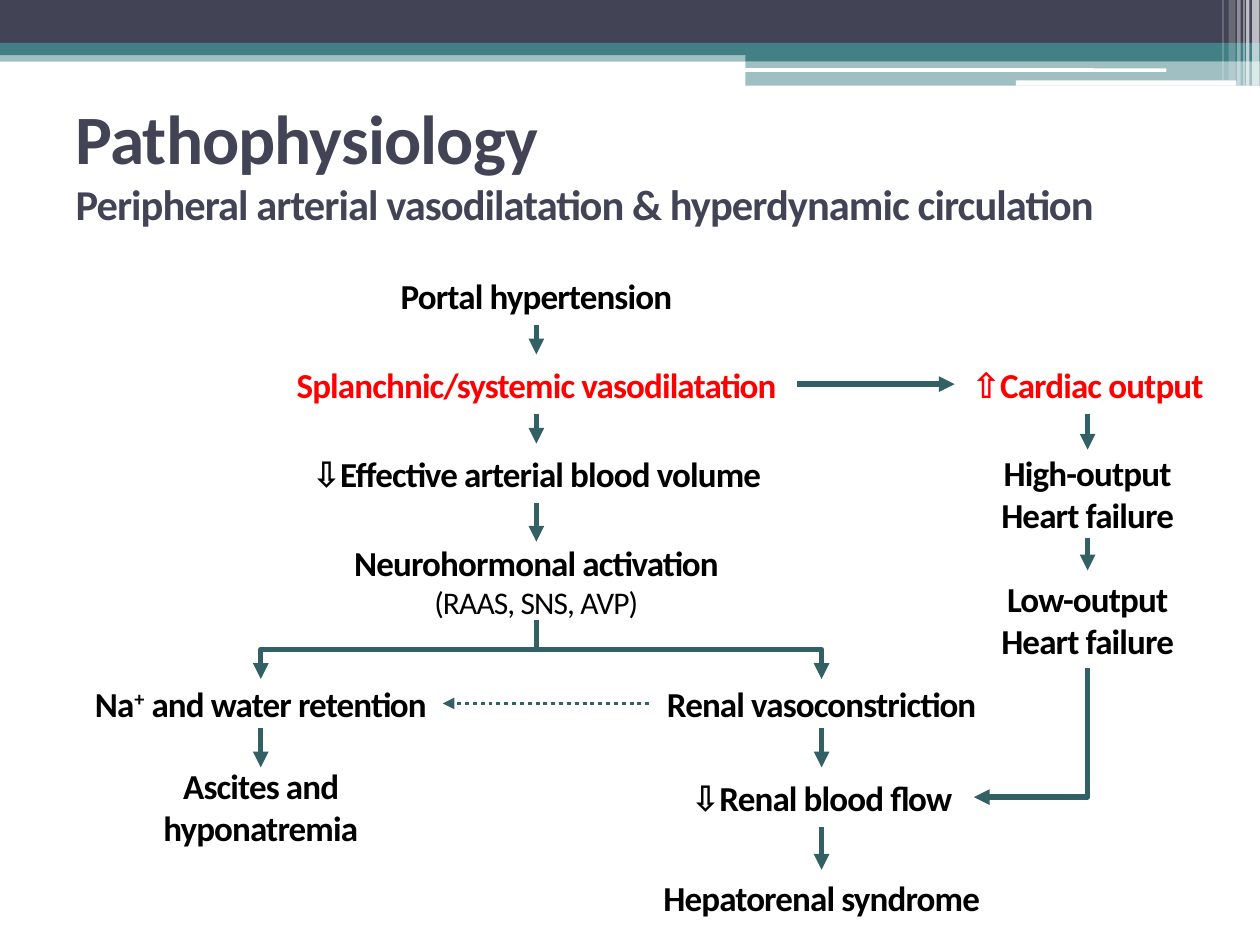
from lxml import etree
from pptx import Presentation
from pptx.dml.color import RGBColor
from pptx.enum import dml, shapes, text
from pptx.oxml import ns
from pptx.util import Pt

COLORS = {
    "navy": "424456", "teal": "438086", "arrow": "326065",
    "white": "FFFFFF", "black": "000000", "red": "FF0000",
}
FONT = "Calibri"
LEFT, MAIN, RENAL, HEART = 149, 306.5, 469.5, 621.5
TOP, SIDE_LEFT, BOTTOM, SIDE_RIGHT = range(4)

BANDS = [
    (0, 28.8, 720, 6.5, "teal", 50),
    (0, 0, 720, 24.5, "navy", 100),
    (0, 24.5, 720, 7, "teal", 100),
    (426, 28, 294, 7, "teal", 100),
    (426, 35, 294, 14, "teal", 50),
]
HIGHLIGHTS = [
    (425.5, 39, 241, 2, "white", 100),
    (580.5, 46, 126, 3, "white", 100),
]
EDGE_STRIPES = [
    (715.5, 4.2, 49, 65), (712, 2, 49, 65), (710.5, 0.7, 49, 60),
    (707, 2, 49, 40), (702, 4, 46, 20), (698.5, 0.7, 46, 30),
]

STEPS = {
    "portal": (MAIN, 152, 208, 34, ["Portal hypertension"], "black"),
    "vasodilatation": (MAIN, 202.5, 298, 34, ["Splanchnic/systemic vasodilatation"], "red"),
    "volume": (MAIN, 253.5, 287, 34, ["⇩Effective arterial blood volume"], "black"),
    "activation": (MAIN, 309.5, 276, 45, ["Neurohormonal activation", "(RAAS, SNS, AVP)"], "black"),
    "retention": (LEFT, 388, 208, 28, ["Na^+^ and water retention"], "black"),
    "constriction": (RENAL, 388, 197, 28, ["Renal vasoconstriction"], "black"),
    "ascites": (LEFT, 438.5, 208, 45, ["Ascites and hyponatremia"], "black"),
    "flow": (RENAL, 438.5, 174, 34, ["⇩Renal blood flow"], "black"),
    "syndrome": (RENAL, 497, 208, 32, ["Hepatorenal syndrome"], "black"),
    "output": (HEART, 202.5, 152, 34, ["⇧Cardiac output"], "red"),
    "high_output": (HEART, 257, 163, 50.5, ["High-output", "Heart failure"], "black"),
    "low_output": (HEART, 326, 163, 56, ["Low-output", "Heart failure"], "black"),
}
CHAINS = [
    ["portal", "vasodilatation", "volume", "activation"],
    ["constriction", "flow", "syndrome"],
    ["retention", "ascites"],
    ["output", "high_output", "low_output"],
]


def rgb(name):
    return RGBColor.from_string(COLORS[name])


def format_font(paragraph, size, color, bold=True):
    font = paragraph.font
    font.name, font.size, font.bold = FONT, Pt(size), bold
    font.color.rgb = rgb(color)
    for run in paragraph.runs:
        run.font._element.set("spc", "-50")


def add_bar(slide, left, top, width, height, color, opacity,
            preset=shapes.MSO_SHAPE.RECTANGLE):
    bar = slide.shapes.add_shape(preset, Pt(left), Pt(top), Pt(width), Pt(height))
    bar.shadow.inherit = False
    bar.line.fill.background()
    bar.fill.solid()
    bar.fill.fore_color.rgb = rgb(color)
    if opacity < 100:
        tint = bar._element.spPr.find(".//" + ns.qn("a:srgbClr"))
        etree.SubElement(tint, ns.qn("a:alpha"), val=str(opacity * 1000))


def add_header(slide):
    for band in BANDS:
        add_bar(slide, *band)
    for highlight in HIGHLIGHTS:
        add_bar(slide, *highlight, preset=shapes.MSO_SHAPE.ROUNDED_RECTANGLE)
    for left, width, height, opacity in EDGE_STRIPES:
        add_bar(slide, left, 0, width, height, "white", opacity)


def add_title(slide, heading, subtitle):
    title = slide.shapes.title
    title.left, title.top, title.width, title.height = Pt(36), Pt(50.5), Pt(648), Pt(84)
    title.text_frame.vertical_anchor = text.MSO_ANCHOR.MIDDLE
    paragraph = title.text_frame.paragraphs[0]
    paragraph.alignment = text.PP_ALIGN.LEFT
    paragraph.add_run().text = heading
    paragraph.add_line_break()
    paragraph.add_run().text = subtitle
    format_font(paragraph, 39.6, "navy")
    paragraph.runs[1].font.size = Pt(24.3)


def add_step(slide, center, top, width, height, lines, color):
    step = slide.shapes.add_shape(
        shapes.MSO_SHAPE.ROUNDED_RECTANGLE,
        Pt(center - width / 2), Pt(top), Pt(width), Pt(height))
    step.shadow.inherit = False
    step.fill.background()
    step.line.fill.background()
    frame = step.text_frame
    frame.word_wrap = True
    frame.vertical_anchor = text.MSO_ANCHOR.MIDDLE
    for index, line in enumerate(lines):
        paragraph = frame.add_paragraph() if index else frame.paragraphs[0]
        paragraph.alignment = text.PP_ALIGN.CENTER
        for part, wording in enumerate(line.split("^")):
            run = paragraph.add_run()
            run.text = wording
            if part % 2:
                run.font._element.set("baseline", "30000")
        detail = line.startswith("(")
        format_font(paragraph, 18 if detail else 20, color, not detail)
    return step


def style_arrow(arrow, width=3):
    arrow.line.color.rgb = rgb("arrow")
    arrow.line.width = Pt(width)
    etree.SubElement(arrow.line._get_or_add_ln(), ns.qn("a:tailEnd"), type="triangle")
    etree.SubElement(arrow._element.spPr, ns.qn("a:effectLst"))


def add_arrow(slide, source, source_site, target, target_site, dotted=False):
    arrow = slide.shapes.add_connector(shapes.MSO_CONNECTOR.STRAIGHT, 0, 0, 0, 0)
    arrow.begin_connect(source, source_site)
    arrow.end_connect(target, target_site)
    if dotted:
        arrow.line.dash_style = dml.MSO_LINE.ROUND_DOT
    style_arrow(arrow, 2.25 if dotted else 3)


def add_elbow(slide, start, end, preset="bentConnector3"):
    (x1, y1), (x2, y2) = start, end
    middle_x, middle_y = (x1 + x2) / 2, (y1 + y2) / 2
    length, spread = y2 - y1, abs(x2 - x1)
    near, far = middle_x - length / 2, middle_x + length / 2
    rightward = x2 > x1
    begin_x, end_x = (far, near) if rightward else (near, far)
    elbow = slide.shapes.add_connector(
        shapes.MSO_CONNECTOR.ELBOW, Pt(begin_x), Pt(middle_y - spread / 2),
        Pt(end_x), Pt(middle_y + spread / 2))
    properties = elbow._element.spPr
    properties.find(ns.qn("a:xfrm")).set("rot", str((270 if rightward else 90) * 60000))
    properties.find(ns.qn("a:prstGeom")).set("prst", preset)
    style_arrow(elbow)


def main():
    deck = Presentation()
    deck.slide_width, deck.slide_height = Pt(720), Pt(540)
    slide = deck.slides.add_slide(deck.slide_layouts[5])
    add_header(slide)
    add_title(slide, "Pathophysiology",
              "Peripheral arterial vasodilatation & hyperdynamic circulation")
    steps = {key: add_step(slide, *step) for key, step in STEPS.items()}
    for chain in CHAINS:
        for source, target in zip(chain, chain[1:]):
            add_arrow(slide, steps[source], BOTTOM, steps[target], TOP)
    add_arrow(slide, steps["vasodilatation"], SIDE_RIGHT, steps["output"], SIDE_LEFT)
    add_arrow(slide, steps["constriction"], SIDE_LEFT, steps["retention"], SIDE_RIGHT, True)
    for branch in (LEFT, RENAL):
        add_elbow(slide, (MAIN, 354.5), (branch, 388))
    add_elbow(slide, (HEART, 382), (556.5, 455.5), "bentConnector2")
    deck.save("out.pptx")


if __name__ == "__main__":
    main()
